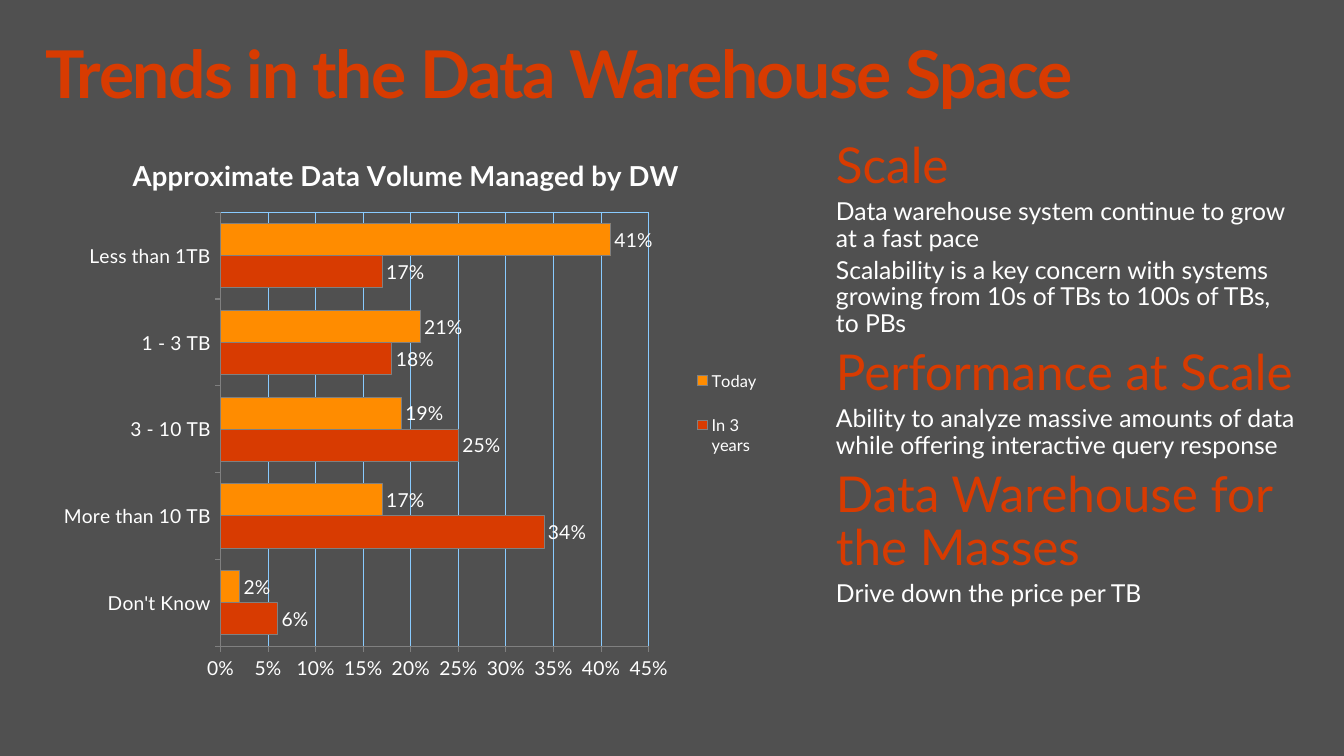
"""Builds a slide on data warehouse trends with a bar chart and key points."""
from pptx import Presentation
from pptx.chart.data import CategoryChartData
from pptx.dml.color import RGBColor
from pptx.enum.chart import XL_CHART_TYPE as ChartType, XL_LABEL_POSITION as LabelPosition
from pptx.enum.chart import XL_LEGEND_POSITION as LegendPosition, XL_TICK_MARK as TickMark
from pptx.oxml import parse_xml
from pptx.oxml.ns import nsdecls
from pptx.util import Inches, Pt

COLORS = {"background": "505050", "accent": "D83B01", "text": "FFFFFF",
          "today": "FF8C00", "grid": "89CBFF", "outline": "808080"}


def set_font(font, size, color, bold=False):
    font.name = "Lato"
    font.size = Pt(size)
    font.bold = bold
    font.color.rgb = RGBColor.from_string(COLORS[color])


def make_layout(x, y, width, height, target=""):
    return parse_xml(
        f'<c:layout {nsdecls("c")}><c:manualLayout>{target}'
        '<c:xMode val="edge"/><c:yMode val="edge"/>'
        f'<c:x val="{x}"/><c:y val="{y}"/><c:w val="{width}"/><c:h val="{height}"/>'
        '</c:manualLayout></c:layout>')


deck = Presentation()
deck.slide_width, deck.slide_height = Inches(13.6), Inches(7.65)
page = deck.slides.add_slide(deck.slide_layouts[6])
page.background.fill.solid()
page.background.fill.fore_color.rgb = RGBColor.from_string(COLORS["background"])

title = [("Trends in the Data Warehouse Space", 48, "accent", True)]
points = [
    ("Scale", 36, "accent", False),
    ("Data warehouse system continue to grow at a fast pace", 18, "text", False),
    ("Scalability is a key concern with systems growing from 10s of TBs to 100s of TBs, to PBs",
     18, "text", False),
    ("Performance at Scale", 36, "accent", False),
    ("Ability to analyze massive amounts of data while offering interactive query response",
     18, "text", False),
    ("Data Warehouse for the Masses", 36, "accent", False),
    ("Drive down the price per TB", 18, "text", False),
]
for place, lines in [((0.3, 0.32, 13, 1), title), ((8.3, 1.33, 5, 5.73), points)]:
    box = page.shapes.add_textbox(*map(Inches, place))
    frame = box.text_frame
    frame.word_wrap = True
    frame.margin_left = frame.margin_right = Inches(0.16)
    frame.margin_top = frame.margin_bottom = Inches(0.1)
    for index, (words, size, color, bold) in enumerate(lines):
        para = frame.paragraphs[0] if index == 0 else frame.add_paragraph()
        span = para.add_run()
        span.text = words
        set_font(para.font, size, color, bold)
        para.line_spacing = 0.9
        if lines is points:
            para.space_before = Pt(size * 0.2)
        else:
            span.font._element.set("spc", "-100")

data = CategoryChartData(number_format="0%")
data.categories = ["Don't Know", "More than 10 TB", "3 - 10 TB", "1 - 3 TB", "Less than 1TB"]
data.add_series("In 3 years", [0.06, 0.34, 0.25, 0.18, 0.17])
data.add_series("Today", [0.02, 0.17, 0.19, 0.21, 0.41])
chart = page.shapes.add_chart(ChartType.BAR_CLUSTERED, Inches(0.5), Inches(1.36),
                              Inches(7.22), Inches(5.63), data).chart
set_font(chart.font, 16, "background")

chart.has_title = True
heading = chart.chart_title.text_frame
heading.text = "Approximate Data Volume Managed by DW"
set_font(heading.paragraphs[0].font, 20, "text", True)

chart.has_legend = True
legend = chart.legend
legend.position = LegendPosition.RIGHT
legend.include_in_layout = False
set_font(legend.font, 12, "text")
legend._element.find("{*}legendPos").addnext(make_layout(0.9, 0.38, 0.1, 0.24))

for axis in (chart.category_axis, chart.value_axis):
    axis.major_tick_mark = TickMark.OUTSIDE
    axis.format.line.color.rgb = RGBColor.from_string(COLORS["outline"])
    set_font(axis.tick_labels.font, 14, "text")
chart.category_axis.has_major_gridlines = False
scale = chart.value_axis
scale.minimum_scale, scale.maximum_scale, scale.major_unit = 0, 0.45, 0.05
scale.tick_labels.number_format = "0%"
scale.tick_labels.number_format_is_linked = False
scale.has_major_gridlines = True
scale.major_gridlines.format.line.color.rgb = RGBColor.from_string(COLORS["grid"])
scale.major_gridlines.format.line.width = Pt(0.75)

plot = chart.plots[0]
plot.gap_width = 70
plot.overlap = 0
plot.vary_by_categories = False
for series, color in zip(plot.series, ("accent", "today")):
    series.format.fill.solid()
    series.format.fill.fore_color.rgb = RGBColor.from_string(COLORS[color])
    series.format.line.color.rgb = RGBColor.from_string(COLORS["outline"])
    series.format.line.width = Pt(0.75)
    labels = series.data_labels
    labels.show_value = True
    labels.position = LabelPosition.OUTSIDE_END
    labels.number_format = "0%"
    labels.number_format_is_linked = False
    set_font(labels.font, 14, "text")

plot_area = chart._chartSpace.chart.plotArea
for default_layout in plot_area.findall("{*}layout"):
    plot_area.remove(default_layout)
plot_area.insert(0, make_layout(0.24, 0.14, 0.6, 0.78, '<c:layoutTarget val="inner"/>'))
plot_area.append(parse_xml(
    f'<c:spPr {nsdecls("c", "a")}><a:noFill/><a:ln w="9525"><a:solidFill>'
    f'<a:srgbClr val="{COLORS["grid"]}"/></a:solidFill></a:ln></c:spPr>'))

deck.save("out.pptx")
